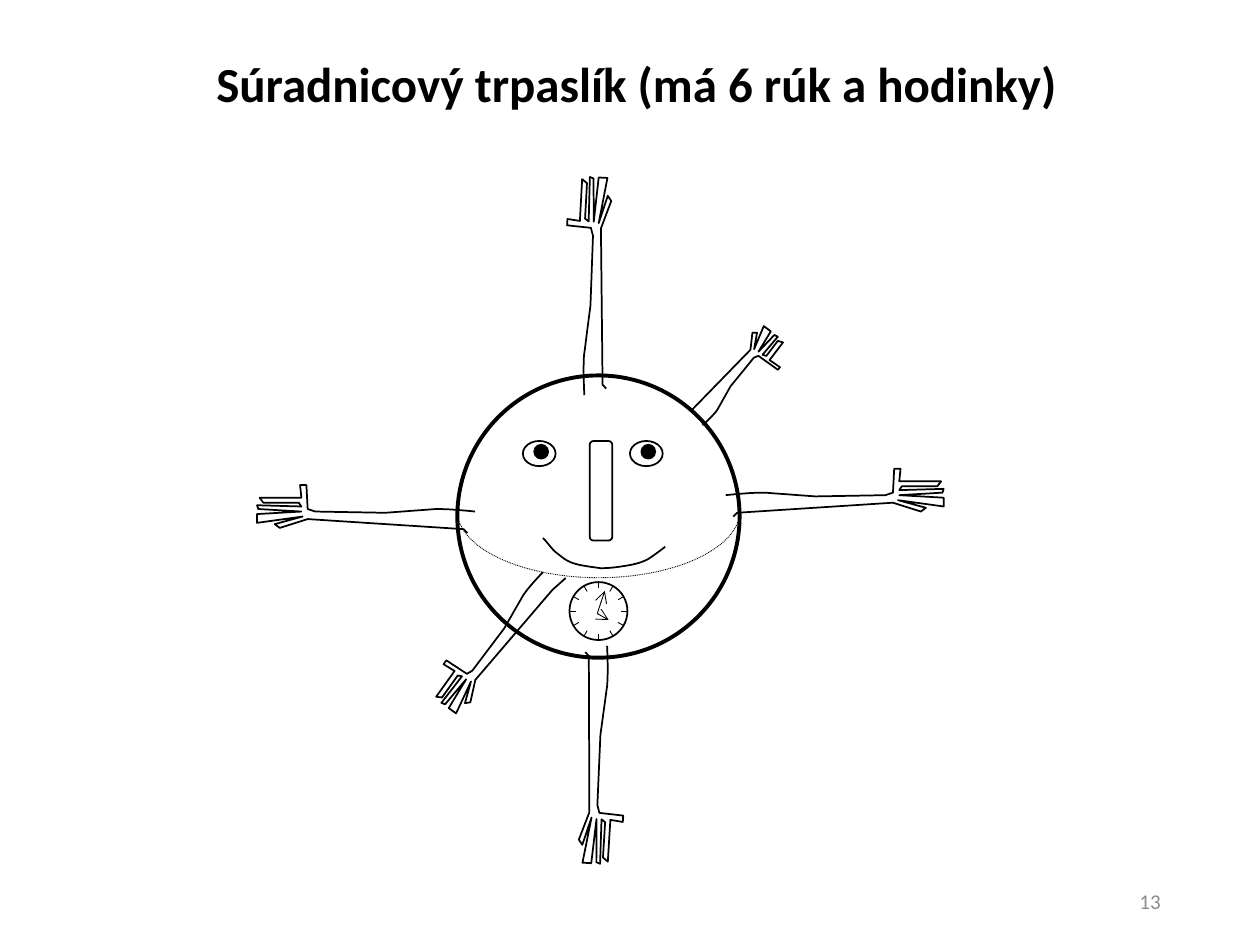
from math import cos, radians, sin

from pptx import Presentation
from pptx.dml.color import RGBColor
from pptx.enum.dml import MSO_LINE
from pptx.enum.shapes import MSO_CONNECTOR, MSO_SHAPE
from pptx.enum.text import MSO_ANCHOR, PP_ALIGN
from pptx.oxml.ns import qn
from pptx.util import Inches, Pt
from lxml.etree import SubElement

FOREARM = [(5.76, 3.93), (5.86, 3.92), (5.96, 3.91), (6.07, 3.91),
           (6.2, 3.92), (6.47, 3.94), (6.47, 3.94)]
HAND = [(7.02, 3.93), (7.05, 3.92), (7.08, 3.91), (7.09, 3.72), (7.14, 3.72),
        (7.13, 3.82), (7.46, 3.82), (7.43, 3.86), (7.15, 3.86), (7.13, 3.89),
        (7.48, 3.88), (7.47, 3.91), (7.13, 3.93), (7.48, 3.95), (7.48, 4.02),
        (7.12, 3.97), (7.34, 4.03), (7.3, 4.06), (7.08, 3.99), (5.85, 4.07)]
MOUTH = [(4.31, 4.27), (4.35, 4.31), (4.38, 4.36), (4.42, 4.39),
         (4.46, 4.42), (4.49, 4.45), (4.55, 4.47),
         (4.61, 4.49), (4.7, 4.5), (4.77, 4.51),
         (4.84, 4.51), (4.91, 4.5), (4.97, 4.49),
         (5.03, 4.48), (5.08, 4.47), (5.14, 4.44),
         (5.19, 4.41), (5.28, 4.34), (5.28, 4.34)]
ARMS = [
    (3.8, 2.08, 1.73, 0.38, 273.1, False, 5.82),
    (5.41, 2.83, 0.92, 0.38, 127.3, True, 5.82),
    (5.76, 3.72, 1.73, 0.38, 0, False, 5.82),
    (3.92, 5.8, 1.73, 0.38, 93.5, False, 5.82),
    (2.04, 3.85, 1.73, 0.38, 0, True, 5.82),
    (3.24, 4.84, 1.38, 0.39, 305.6, True, 5.67),
]


def color(hex_string):
    return RGBColor.from_string(hex_string)


def smooth(controls, steps=8):
    points = [controls[0]]
    for first in range(0, len(controls) - 1, 3):
        segment = controls[first:first + 4]
        for step in range(1, steps + 1):
            t = step / steps
            weights = ((1 - t) ** 3, 3 * t * (1 - t) ** 2, 3 * t * t * (1 - t), t ** 3)
            points.append(tuple(sum(weight * point[axis] for weight, point in zip(weights, segment))
                                for axis in (0, 1)))
    return points


class Sketch:
    ink = "000000"
    font = "Calibri"

    def __init__(self, slide):
        self.slide = slide

    def style(self, shape, weight, fill=None):
        shape.shadow.inherit = False
        if fill:
            shape.fill.solid()
            shape.fill.fore_color.rgb = color(fill)
        else:
            shape.fill.background()
        shape.line.color.rgb = color(self.ink)
        shape.line.width = Pt(weight)
        return shape

    def preset(self, kind, left, top, width, height, weight=1, fill=None):
        shape = self.slide.shapes.add_shape(
            kind, Inches(left), Inches(top), Inches(width), Inches(height))
        return self.style(shape, weight, fill)

    def outline(self, points):
        corners = [(Inches(x), Inches(y)) for x, y in points]
        builder = self.slide.shapes.build_freeform(*corners[0], scale=1.0)
        builder.add_line_segments(corners[1:], close=False)
        return self.style(builder.convert_to_shape(), 1)

    def arm(self, left, top, width, height, rotation, mirrored, cuff):
        points = smooth(FOREARM) + HAND + [(cuff, 4.1)]
        columns, rows = zip(*points)
        start, span = min(columns), max(columns) - min(columns)
        upper, depth = min(rows), max(rows) - min(rows)
        placed = []
        for x, y in points:
            share = (x - start) / span
            if mirrored:
                share = 1 - share
            placed.append((left + share * width, top + (y - upper) / depth * height))
        self.outline(placed).rotation = rotation

    def line(self, start, end, arrow=False):
        connector = self.slide.shapes.add_connector(
            MSO_CONNECTOR.STRAIGHT, *(Inches(value) for value in start + end))
        connector.line.color.rgb = color(self.ink)
        connector.line.width = Pt(0.5)
        properties = connector._element.spPr
        if arrow:
            SubElement(properties.get_or_add_ln(), qn("a:tailEnd"), type="arrow")
        SubElement(properties, qn("a:effectLst"))

    def clock(self, x, y, radius):
        self.preset(MSO_SHAPE.OVAL, x - radius, y - radius, 2 * radius, 2 * radius)
        for hour in range(12):
            angle = radians(30 * hour)
            outer, inner = ((x + reach * sin(angle), y - reach * cos(angle))
                            for reach in (radius, radius - 0.05))
            self.line(outer, inner)
        for tip in ((4.8, 4.69), (4.83, 4.92)):
            self.line((4.74, 4.87), tip, arrow=True)

    def text(self, left, top, width, height, words, size, ink, alignment, bold=False):
        box = self.slide.shapes.add_textbox(
            Inches(left), Inches(top), Inches(width), Inches(height))
        frame = box.text_frame
        frame.word_wrap = True
        frame.vertical_anchor = MSO_ANCHOR.MIDDLE
        paragraph = frame.paragraphs[0]
        paragraph.text = words
        paragraph.alignment = alignment
        paragraph.font.name = self.font
        paragraph.font.size = Pt(size)
        paragraph.font.bold = bold
        paragraph.font.color.rgb = color(ink)


def main():
    presentation = Presentation()
    presentation.slide_width, presentation.slide_height = Inches(10), Inches(7.5)
    sketch = Sketch(presentation.slides.add_slide(presentation.slide_layouts[6]))

    sketch.preset(MSO_SHAPE.OVAL, 3.63, 2.98, 2.24, 2.24, weight=2.25)
    equator = sketch.preset(MSO_SHAPE.ARC, 4.21, 2.92, 1.08, 2.25, weight=0.5)
    equator.rotation = 90
    equator.adjustments[0], equator.adjustments[1] = 163.75, 53.55
    equator.line.dash_style = MSO_LINE.ROUND_DOT
    sketch.clock(4.75, 4.85, 0.23)

    for eye_left in (4.15, 5):
        sketch.preset(MSO_SHAPE.OVAL, eye_left, 3.5, 0.26, 0.2)
        sketch.preset(MSO_SHAPE.OVAL, eye_left + 0.09, 3.53, 0.11, 0.11, fill=sketch.ink)
    sketch.preset(MSO_SHAPE.ROUNDED_RECTANGLE, 4.68, 3.5, 0.18, 0.79)
    sketch.outline(smooth(MOUTH))
    for arm in ARMS:
        sketch.arm(*arm)

    sketch.text(1.15, 0.37, 7.8, 0.57, "Súradnicový trpaslík (má 6 rúk a hodinky)",
                28, sketch.ink, PP_ALIGN.CENTER, bold=True)
    sketch.text(7.06, 6.95, 2.25, 0.4, "13", 12, "8C8C8C", PP_ALIGN.RIGHT)
    presentation.save("out.pptx")


if __name__ == "__main__":
    main()
